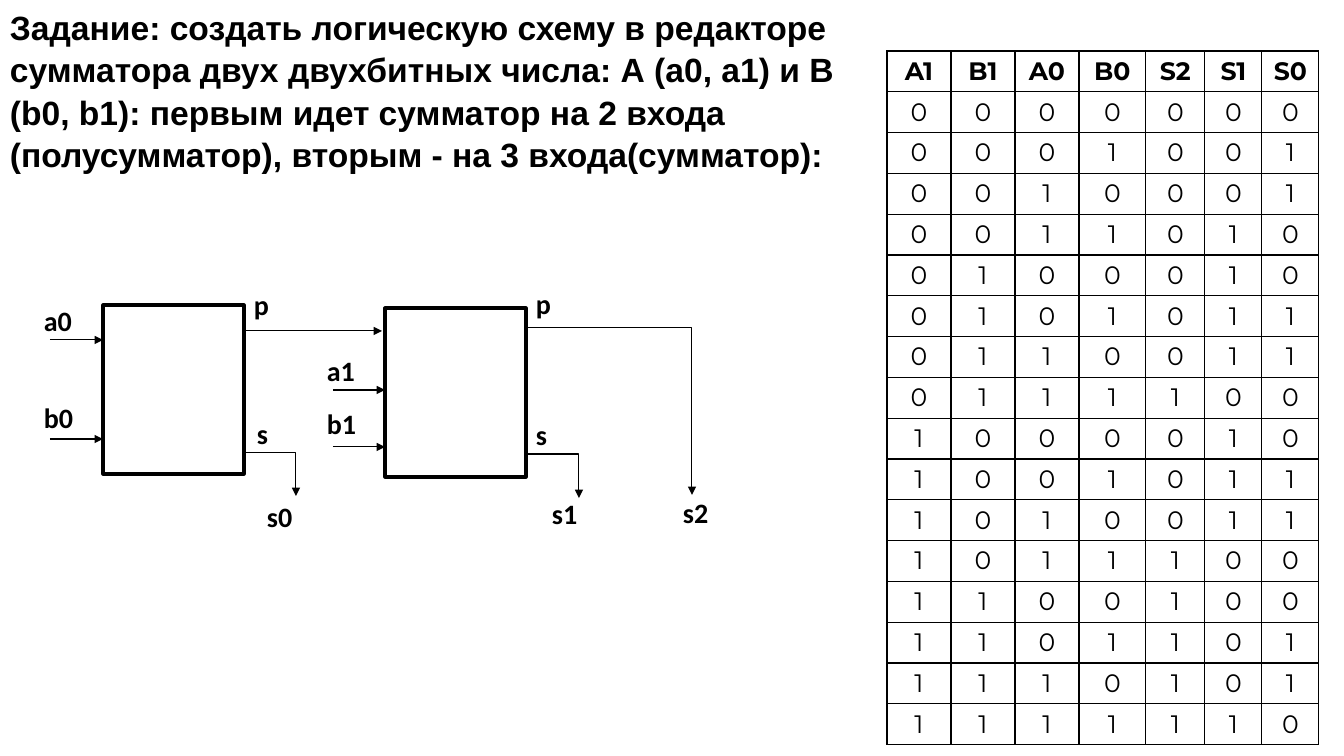
from itertools import product

from lxml.etree import SubElement
from pptx import Presentation
from pptx.dml.color import RGBColor
from pptx.enum.shapes import MSO_CONNECTOR as CONN, MSO_SHAPE as SHAPE
from pptx.enum.text import MSO_AUTO_SIZE as AUTO, PP_ALIGN as ALIGN
from pptx.oxml.ns import qn
from pptx.util import Pt

PX = 914400 / 100.8
BLACK, WHITE = "000000", "FFFFFF"

TITLE = ("Задание: создать логическую схему в редакторе сумматора двух двухбитных "
         "числа: А (а0, а1) и В (b0, b1): первым идет сумматор на 2 входа "
         "(полусумматор), вторым - на 3 входа(сумматор):")

ADDER_SIZE = (141, 169)
ADDERS = [(103, 305), (385, 308)]
# x from, x to, y
INPUT_ARROWS = [(50, 103, 340), (50, 103, 439), (244, 382, 331),
                (333, 385, 390), (333, 385, 447)]
# start, corner x, end y
OUTPUT_ARROWS = [((244, 453), 296, 496), ((526, 454), 579, 498),
                 ((526, 328), 692, 495)]
# text, left, top
LABELS = [("a0", 34, 299), ("b0", 34, 396), ("s", 247, 412), ("p", 244, 283),
          ("a1", 317, 349), ("b1", 317, 402), ("s", 526, 413), ("p", 526, 282),
          ("s0", 257, 495), ("s1", 542, 492), ("s2", 673, 491)]

HEADER = ["A1", "B1", "A0", "B0", "S2", "S1", "S0"]
TABLE_LEFT, TABLE_TOP, TABLE_HEIGHT = 887, 51, 694
COLUMN_WIDTHS = [64, 64, 64, 67, 59, 57, 57]


def emu(*lengths):
    return [round(v * PX) for v in lengths]


def rgb(color):
    return RGBColor.from_string(color)


def style_text(p, font, size, bold):
    for r in p.runs:
        r.font.name, r.font.size, r.font.bold = font, Pt(size), bold
        r.font.color.rgb = rgb(BLACK)


def add_text(text, box, font, size):
    tf = slide.shapes.add_textbox(*emu(*box)).text_frame
    tf.word_wrap = True
    tf.text = text
    style_text(tf.paragraphs[0], font, size, True)
    return tf


def style_arrow(s):
    s.line.color.rgb = rgb(BLACK)
    s.line.width = Pt(0.75)
    SubElement(s.line._get_or_add_ln(), qn("a:tailEnd"), type="triangle")


def add_borders(cell):
    """Draw a thin black line on all four sides of the cell."""
    pr = cell._tc.get_or_add_tcPr()
    for i, side in enumerate(("a:lnL", "a:lnR", "a:lnT", "a:lnB")):
        ln = pr.makeelement(qn(side), {"w": str(Pt(1))})
        fill = SubElement(ln, qn("a:solidFill"))
        SubElement(fill, qn("a:srgbClr"), val=BLACK)
        pr.insert(i, ln)


def truth_rows():
    """All inputs of the two-bit adder, each with the bits of the sum."""
    for a1, b1, a0, b0 in product((0, 1), repeat=4):
        total = 2 * (a1 + b1) + a0 + b0
        yield [a1, b1, a0, b0, *f"{total:03b}"]


prs = Presentation()
prs.slide_width, prs.slide_height = emu(1344, 756)
slide = prs.slides.add_slide(prs.slide_layouts[6])

tf = add_text(TITLE, (0, 0, 877, 173), "Arial", 24)
tf.auto_size = AUTO.SHAPE_TO_FIT_TEXT
tf.paragraphs[0].line_spacing = 1.05

for left, top in ADDERS:
    s = slide.shapes.add_shape(SHAPE.RECTANGLE, *emu(left, top, *ADDER_SIZE))
    s.shadow.inherit = False
    s.fill.solid()
    s.fill.fore_color.rgb = rgb(WHITE)
    s.line.color.rgb = rgb(BLACK)
    s.line.width = Pt(2.25)

for x1, x2, y in INPUT_ARROWS:
    s = slide.shapes.add_connector(CONN.STRAIGHT, *emu(x1, y, x2, y))
    style_arrow(s)
    SubElement(s._element.spPr, qn("a:effectLst"))

for (x, y), corner_x, end_y in OUTPUT_ARROWS:
    builder = slide.shapes.build_freeform(x, y, scale=PX)
    builder.add_line_segments([(corner_x, y), (corner_x, end_y)], close=False)
    s = builder.convert_to_shape()
    s.shadow.inherit = False
    s.fill.background()
    style_arrow(s)

for text, left, top in LABELS:
    width = 76 if len(text) == 2 else 55
    add_text(text, (left, top, width, 50), "Calibri", 20)

rows = [HEADER, *truth_rows()]
table = slide.shapes.add_table(
    len(rows), len(HEADER),
    *emu(TABLE_LEFT, TABLE_TOP, sum(COLUMN_WIDTHS), TABLE_HEIGHT)).table
for column, width in zip(table.columns, emu(*COLUMN_WIDTHS)):
    column.width = width
for i, row in enumerate(rows):
    for j, value in enumerate(row):
        cell = table.cell(i, j)
        cell.text = str(value)
        cell.fill.background()
        add_borders(cell)
        p = cell.text_frame.paragraphs[0]
        p.alignment = ALIGN.CENTER
        style_text(p, "Montserrat", 18, i == 0)

prs.save("out.pptx")
